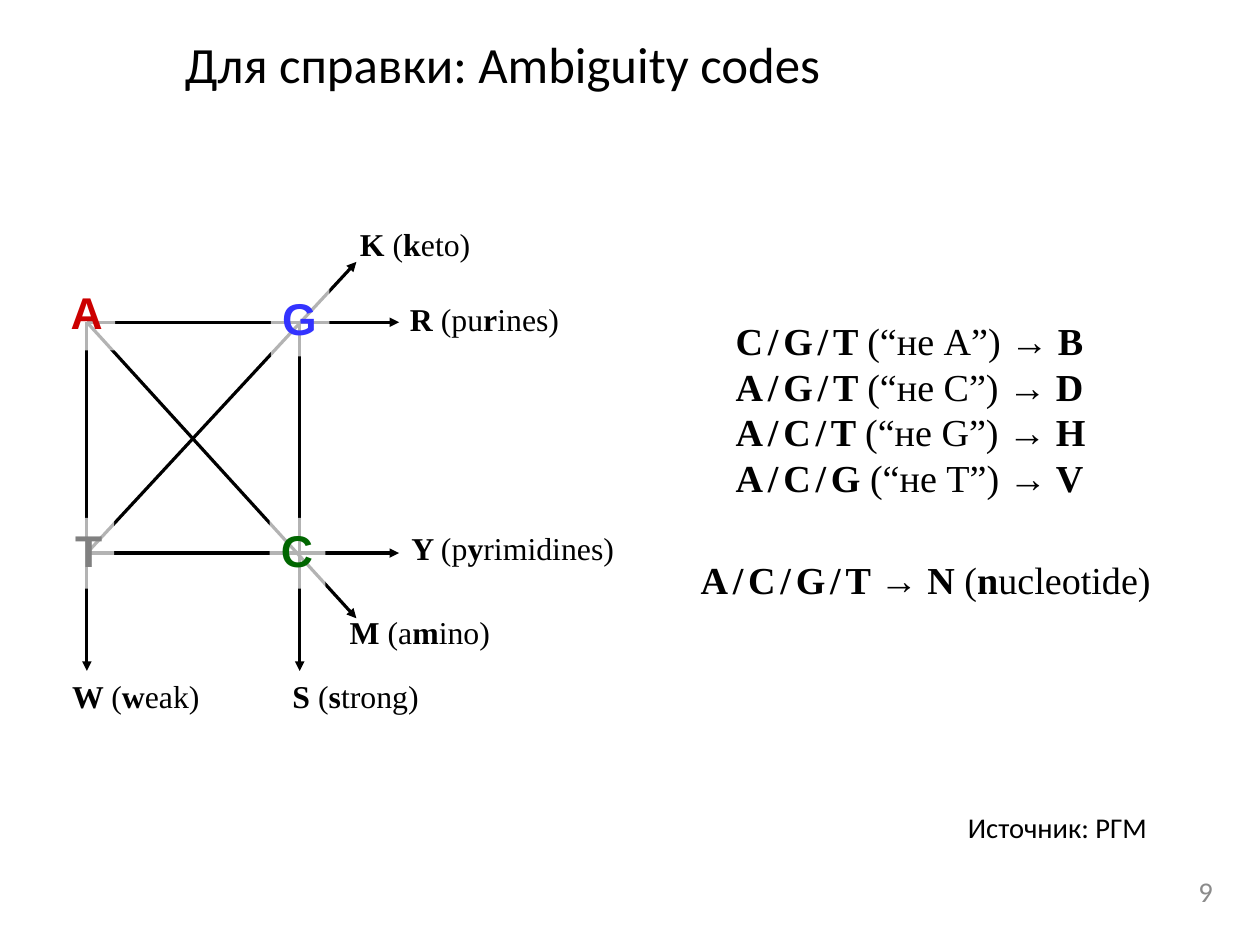
import dataclasses
import typing

import pptx
import pptx.dml.color
import pptx.enum.shapes
import pptx.enum.text
import pptx.oxml
import pptx.oxml.ns
import pptx.util

Cm = pptx.util.Cm
Align = pptx.enum.text.PP_ALIGN
Anchor = pptx.enum.text.MSO_ANCHOR

COLOURS = {
    "black": "000000", "white": "FFFFFF", "page number": "8B8B8B",
    "A": "CC0000", "G": "3333FF", "T": "808080", "C": "006600",
}
SERIF, SANS, BODY = "Times New Roman", "Arial", "Calibri"
LEFT, RIGHT, TOP, BOTTOM = 1.93, 6.66, 7.16, 12.29  # square of bases, cm


@dataclasses.dataclass
class Span:
    text: str
    bold: bool = False
    size: typing.Optional[float] = None
    font: typing.Optional[str] = None


@dataclasses.dataclass
class Area:
    left: float
    top: float
    width: float
    height: float

    def lengths(self) -> list:
        return [Cm(value) for value in dataclasses.astuple(self)]


@dataclasses.dataclass
class Pair:
    """An arrow through two bases and the label of their shared code."""
    start: tuple
    end: tuple
    label: str
    area: Area
    align: Align = Align.LEFT


@dataclasses.dataclass
class Base:
    letter: str
    area: Area


PAIRS = [
    Pair((RIGHT, TOP), (RIGHT, 14.91), "*S *(*s*trong)", Area(6.25, 14.91, 3.38, 1.22)),
    Pair((LEFT, BOTTOM), (8.87, BOTTOM), "*Y *(p*y*rimidines)", Area(8.89, 11.63, 5.11, 1.22)),
    Pair((LEFT, TOP), (8.87, TOP), "*R *(pu*r*ines)", Area(8.86, 6.53, 3.89, 1.22)),
    Pair((LEFT, TOP), (LEFT, 14.91), "*W *(*w*eak)", Area(1.32, 14.91, 3.4, 1.22), Align.CENTER),
    Pair((LEFT, TOP), (7.92, 13.74), "*M *(a*m*ino)", Area(7.52, 13.49, 3.68, 1.22)),
    Pair((LEFT, BOTTOM), (7.92, 5.82), "*K *(*k*eto)", Area(7.75, 4.88, 3, 1.22)),
]
BASES = [
    Base("A", Area(1.32, 6.22, 1.24, 1.57)),
    Base("G", Area(6.02, 6.35, 1.3, 1.57)),
    Base("T", Area(1.42, 11.51, 1.12, 1.57)),
    Base("C", Area(5.99, 11.51, 1.24, 1.57)),
]
TRIPLES = [("CGT", "A", "B"), ("AGT", "C", "D"), ("ACT", "G", "H"), ("ACG", "T", "V")]


def marked(text: str) -> list[Span]:
    """Split text into spans; parts between asterisks are bold."""
    return [Span(part, index % 2 == 1)
            for index, part in enumerate(text.split("*")) if part]


def slashed(bases: str) -> list[Span]:
    """Bases parted by slashes with narrow spaces around them."""
    spans = []
    for mark in "/".join(bases):
        spans += [Span(mark, True), Span(" ", True, 12)]
    return spans[:-1] + [Span(" ", True)]


def rgb(name: str) -> pptx.dml.color.RGBColor:
    return pptx.dml.color.RGBColor.from_string(COLOURS[name])


def write(box, lines: list[list[Span]], *, size: float, font: str, colour: str = "black",
          align: Align = Align.LEFT, anchor: Anchor = Anchor.TOP, wrap: bool = False) -> None:
    frame = box.text_frame
    frame.word_wrap = wrap
    frame.vertical_anchor = anchor
    for index, spans in enumerate(lines):
        para = frame.add_paragraph() if index else frame.paragraphs[0]
        para.alignment = align
        for span in spans:
            run = para.add_run()
            run.text = span.text
            run.font.bold = span.bold
            run.font.size = pptx.util.Pt(span.size or size)
            run.font.name = span.font or font
            run.font.color.rgb = rgb(colour)


def add_text(page, area: Area, lines: list[list[Span]], **style) -> None:
    write(page.shapes.add_textbox(*area.lengths()), lines, **style)


def add_arrow(page, pair: Pair) -> None:
    ends = [Cm(value) for value in pair.start + pair.end]
    arrow = page.shapes.add_connector(pptx.enum.shapes.MSO_CONNECTOR.STRAIGHT, *ends)
    arrow.line.color.rgb = rgb("black")
    arrow.line.width = pptx.util.Pt(2)
    head = pptx.oxml.ns.qn("a:tailEnd")
    line = arrow.line._get_or_add_ln()
    line.append(line.makeelement(head, {"type": "triangle"}))
    properties = arrow._element.spPr
    properties.append(properties.makeelement(pptx.oxml.ns.qn("a:effectLst"), {}))


def add_base(page, base: Base) -> None:
    """A letter on a veil that lets the arrows show faintly."""
    box = page.shapes.add_shape(pptx.enum.shapes.MSO_SHAPE.RECTANGLE, *base.area.lengths())
    box.shadow.inherit = False
    box.line.fill.background()
    box.fill.solid()
    box.fill.fore_color.rgb = rgb("white")
    tint = box._element.spPr.find(".//" + pptx.oxml.ns.qn("a:srgbClr"))
    tint.append(tint.makeelement(pptx.oxml.ns.qn("a:alpha"), {"val": "70000"}))
    write(box, [[Span(base.letter, True)]], size=28, font=SANS, colour=base.letter)


def main() -> None:
    deck = pptx.Presentation()
    deck.slide_width, deck.slide_height = Cm(28), Cm(21)
    page = deck.slides.add_slide(deck.slide_layouts[6])

    add_text(page, Area(3.86, 0.61, 18.49, 1.78),
             [[Span("Для справки: Ambiguity codes")]], size=32, font=BODY)
    for pair in PAIRS:
        add_arrow(page, pair)
    for base in BASES:
        add_base(page, base)
    for pair in PAIRS:
        add_text(page, pair.area, [marked(pair.label)], size=20, font=SERIF, align=pair.align)

    becomes = Span("→", True, font=SANS)
    triples = [slashed(bases) + [Span(f"(“не {missing}”) "), becomes, Span(f" {code}", True)]
               for bases, missing, code in TRIPLES]
    add_text(page, Area(16.1, 6.93, 8.46, 4.75), triples, size=24, font=SERIF)
    any_base = slashed("ACGT") + [becomes] + marked("* N* (*n*ucleotide)")
    add_text(page, Area(15.32, 12.24, 10.74, 1.4), [any_base], size=24, font=SERIF)

    add_text(page, Area(21.26, 17.88, 5.61, 1.12), [[Span("Источник: РГМ")]],
             size=18, font=BODY, wrap=True)
    add_text(page, Area(19.81, 19.25, 7.39, 1.12), [[Span("9")]], size=18, font=BODY,
             colour="page number", align=Align.RIGHT, anchor=Anchor.MIDDLE, wrap=True)
    deck.save("out.pptx")


if __name__ == "__main__":
    main()
